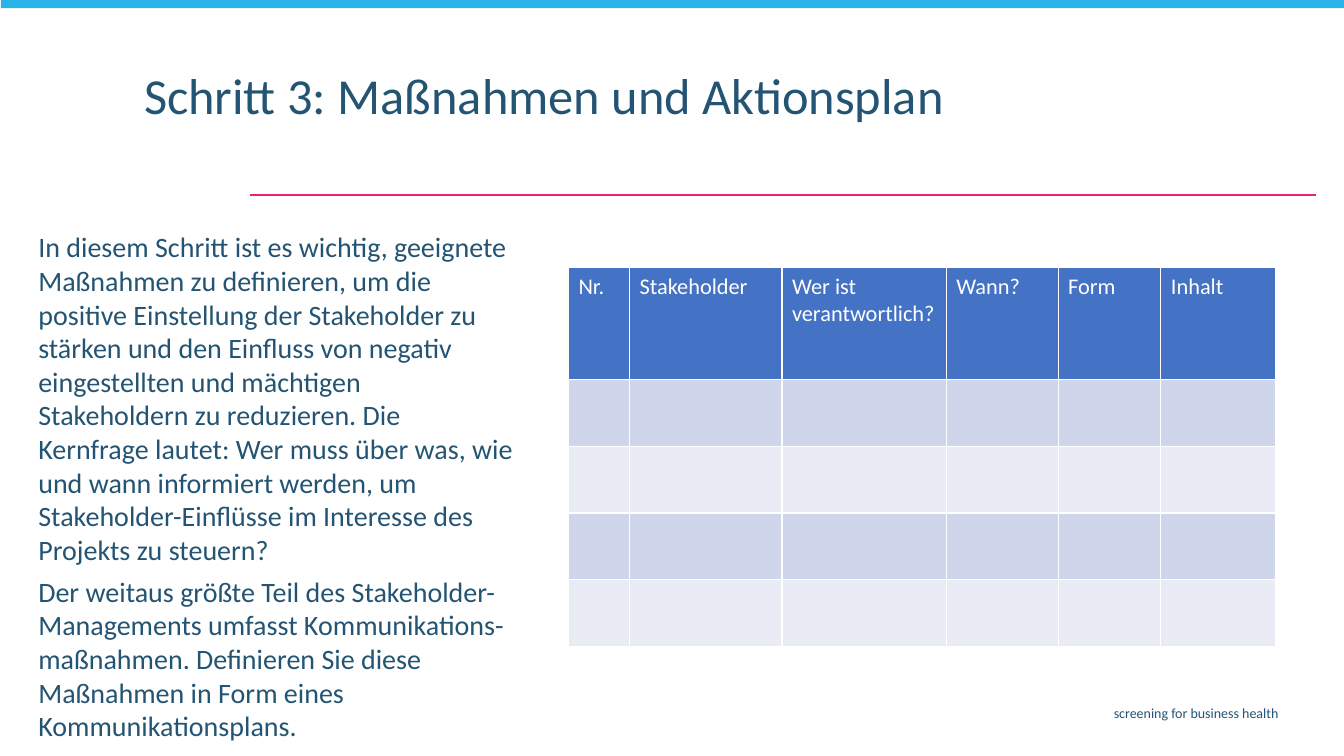
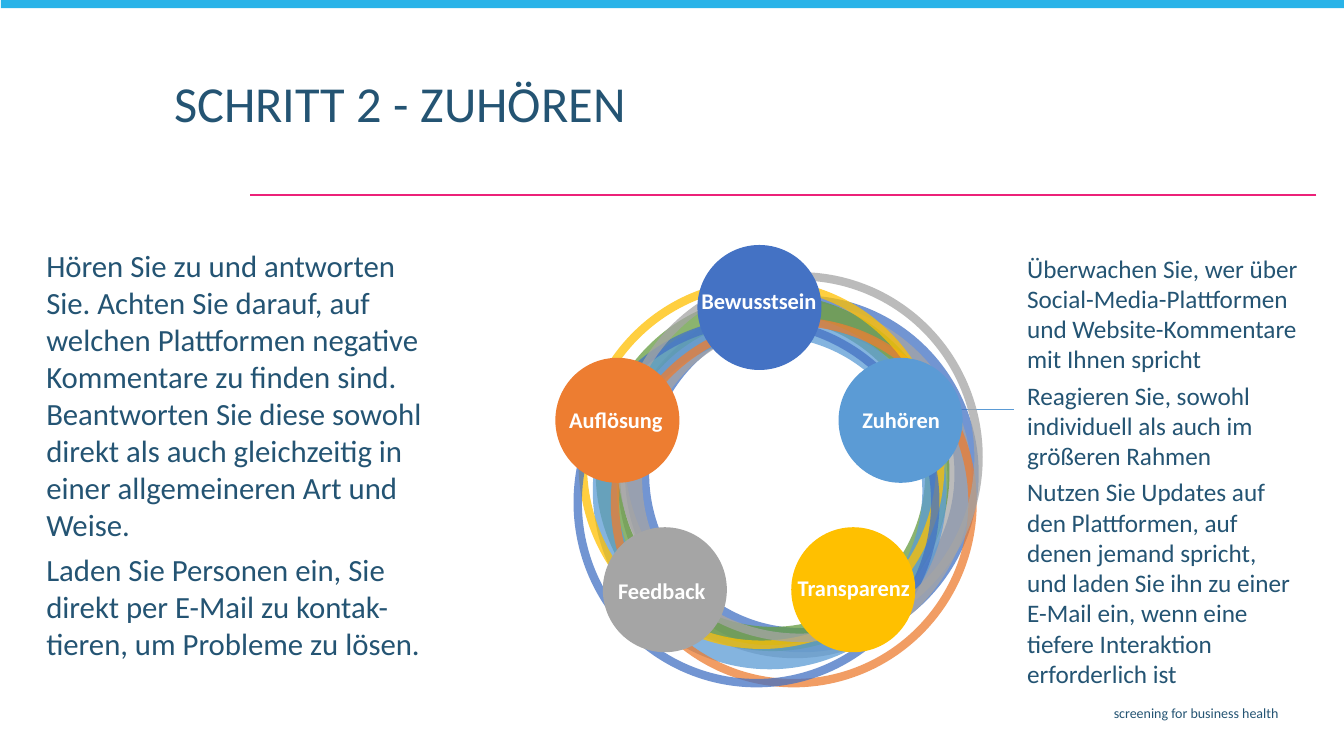
from dataclasses import dataclass

from lxml.etree import SubElement
from pptx import Presentation
from pptx.dml.color import RGBColor
from pptx.enum.shapes import MSO_CONNECTOR as Connector, MSO_SHAPE as Shape
from pptx.enum.text import MSO_ANCHOR as Anchor, PP_ALIGN as Align
from pptx.oxml.ns import qn
from pptx.util import Pt


@dataclass(frozen=True)
class Theme:
    font: str = "Calibri"
    navy: str = "245473"
    pink: str = "EC2179"
    band: str = "29B3E8"
    white: str = "FFFFFF"
    blue: str = "4472C4"
    sky: str = "5B9BD5"
    gray: str = "A5A5A5"
    green: str = "659C40"
    orange: str = "ED7D31"
    yellow: str = "FFC000"
    row_dark: str = "CFD5EA"
    row_light: str = "E9EBF5"
    title_size: int = 36
    lead_size: int = 22
    body_size: int = 20
    note_size: int = 18
    label_size: int = 16
    footer_size: int = 10


theme = Theme()


def add_text(slide, box, paragraphs, size, color=theme.navy, bold=False, align=Align.LEFT,
             gap=0, inset=(7.2, 3.6), anchor=Anchor.TOP, wrap=True, line_spacing=None):
    frame = slide.shapes.add_textbox(*map(Pt, box)).text_frame
    frame.word_wrap = wrap
    frame.vertical_anchor = anchor
    frame.margin_left = frame.margin_right = Pt(inset[0])
    frame.margin_top = frame.margin_bottom = Pt(inset[1])
    frame.text = "\n".join(paragraphs)
    for index, paragraph in enumerate(frame.paragraphs):
        paragraph.alignment = align
        paragraph.line_spacing = line_spacing
        paragraph.space_before = Pt(gap if index else 0)
        for run in paragraph.runs:
            run.font.name = theme.font
            run.font.size = Pt(size)
            run.font.bold = bold
            run.font.color.rgb = RGBColor.from_string(color)


def add_filled(slide, kind, box, color):
    shape = slide.shapes.add_shape(kind, *map(Pt, box))
    shape.shadow.inherit = False
    shape.fill.solid()
    shape.fill.fore_color.rgb = RGBColor.from_string(color)
    shape.line.fill.background()
    return shape


presentation = Presentation()
presentation.slide_width = Pt(960)
presentation.slide_height = Pt(540)
blank_layout = presentation.slide_layouts[6]

rule = (940.3, 139, 178.6, 139, theme.pink, 1.5)
callout = (680.4, 292.3, 724.3, 292.3, theme.sky, 0.5)
pages = [
    ("Schritt 3: Maßnahmen und Aktionsplan", (95.8, 47.5, 697, 54.7), 0.9, [rule]),
    ("SCHRITT 2 - ZUHÖREN", (117.4, 48.2, 715.7, 54.7), None, [rule, callout]),
]
for title, title_box, title_spacing, lines in pages:
    slide = presentation.slides.add_slide(blank_layout)
    for *ends, color, width in lines:
        line = slide.shapes.add_connector(Connector.STRAIGHT, *map(Pt, ends))
        line.line.color.rgb = RGBColor.from_string(color)
        line.line.width = Pt(width)
        SubElement(line._element.spPr, qn("a:effectLst"))
    add_filled(slide, Shape.RECTANGLE, (0.7, -1.4, 960.5, 7.2), theme.band)
    add_text(slide, (262.8, 499.7, 657.4, 20.9), ["screening for business health"],
             theme.footer_size, align=Align.RIGHT)
    add_text(slide, title_box, [title], theme.title_size, line_spacing=title_spacing)

plan_slide, listen_slide = presentation.slides

add_text(plan_slide, (20.9, 161.3, 352, 352), [
    "In diesem Schritt ist es wichtig, geeignete Maßnahmen zu definieren, um die positive "
    "Einstellung der Stakeholder zu stärken und den Einfluss von negativ eingestellten und "
    "mächtigen Stakeholdern zu reduzieren. Die Kernfrage lautet: Wer muss über was, wie und "
    "wann informiert werden, um Stakeholder-Einflüsse im Interesse des Projekts zu steuern?",
    "Der weitaus größte Teil des Stakeholder-Managements umfasst Kommunikations-maßnahmen. "
    "Definieren Sie diese Maßnahmen in Form eines Kommunikationsplans.",
], theme.body_size, gap=6, inset=(6.5, 2.9))

columns = [("Nr.", 43.6), ("Stakeholder", 108.9), ("Wer ist verantwortlich?", 117.4),
           ("Wann?", 79.9), ("Form", 73.4), ("Inhalt", 81.6)]
row_heights = [80] + [47.6] * 4
row_fills = [theme.blue] + [theme.row_dark, theme.row_light] * 2
table = plan_slide.shapes.add_table(
    len(row_heights), len(columns), Pt(406.1), Pt(191.2),
    Pt(sum(width for _, width in columns)), Pt(sum(row_heights))).table
table.first_row = table.horz_banding = False
for column, (_, width) in zip(table.columns, columns):
    column.width = Pt(width)
for row, height, fill in zip(table.rows, row_heights, row_fills):
    row.height = Pt(height)
    for cell in row.cells:
        properties = cell._tc.get_or_add_tcPr()
        for side in ("a:lnL", "a:lnR", "a:lnT", "a:lnB"):
            border = SubElement(properties, qn(side), w=str(Pt(1)))
            SubElement(SubElement(border, qn("a:solidFill")), qn("a:srgbClr"), val=theme.white)
        cell.fill.solid()
        cell.fill.fore_color.rgb = RGBColor.from_string(fill)
for cell, (heading, _) in zip(table.rows[0].cells, columns):
    cell.text = heading
    font = cell.text_frame.paragraphs[0].runs[0].font
    font.name = theme.font
    font.size = Pt(theme.label_size)
    font.color.rgb = RGBColor.from_string(theme.white)

add_text(listen_slide, (26.6, 173.5, 290.2, 306), [
    "Hören Sie zu und antworten Sie. Achten Sie darauf, auf welchen Plattformen negative "
    "Kommentare zu finden sind. Beantworten Sie diese sowohl direkt als auch gleichzeitig "
    "in einer allgemeineren Art und Weise.",
    "Laden Sie Personen ein, Sie direkt per E-Mail zu kontak-tieren, um Probleme zu lösen.",
], theme.lead_size, gap=6, inset=(6.5, 2.9))
add_text(listen_slide, (730.8, 179.3, 199.4, 352), [
    "Überwachen Sie, wer über Social-Media-Plattformen und Website-Kommentare mit Ihnen spricht",
    "Reagieren Sie, sowohl individuell als auch im größeren Rahmen",
    "Nutzen Sie Updates auf den Plattformen, auf denen jemand spricht, und laden Sie ihn zu "
    "einer E-Mail ein, wenn eine tiefere Interaktion erforderlich ist",
], theme.note_size, gap=4.3, inset=(2.9, 1.4))

wide_ring = (252.7, 254.9, 17.3)
thin_ring = (261.4, 264.2, 6)
rings = [
    (446.4, 211, wide_ring, theme.blue),
    (441.4, 215.3, wide_ring, theme.gray),
    (425.5, 210.2, wide_ring, theme.green),
    (423.4, 223.2, wide_ring, theme.sky),
    (436.3, 226.8, thin_ring, theme.orange),
    (413.3, 199.4, thin_ring, theme.yellow),
    (409.7, 226.8, thin_ring, theme.blue),
    (440.6, 194.4, thin_ring, theme.gray),
]
for left, top, (width, height, thickness), color in rings:
    ring = add_filled(listen_slide, Shape.DONUT, (left, top, width, height), color)
    ring.adjustments[0] = thickness / width
    ring_color = next(ring._element.spPr.iter(qn("a:srgbClr")))
    SubElement(ring_color, qn("a:alpha"), val="75000")

stations = [
    ("Transparenz", theme.yellow, (565.2, 376.6), (551.5, 406.1, 116.6)),
    ("Feedback", theme.gray, (430.6, 376.6), (428.4, 408.2, 88.6)),
    ("Auflösung", theme.orange, (396.7, 255.6), (391.7, 286.6, 96.5)),
    ("Zuhören", theme.sky, (599, 255.6), (601.9, 286.6, 83.5)),
    ("Bewusstsein", theme.blue, (498.2, 175), (493.2, 201.6, 97.9)),
]
for label, color, corner, (left, top, width) in stations:
    add_filled(listen_slide, Shape.OVAL, (*corner, 88.6, 89.3), color)
    add_text(listen_slide, (left, top, width, 26.6), [label], theme.label_size, theme.white,
             bold=True, align=Align.CENTER, anchor=Anchor.BOTTOM, wrap=False)

presentation.save("out.pptx")
